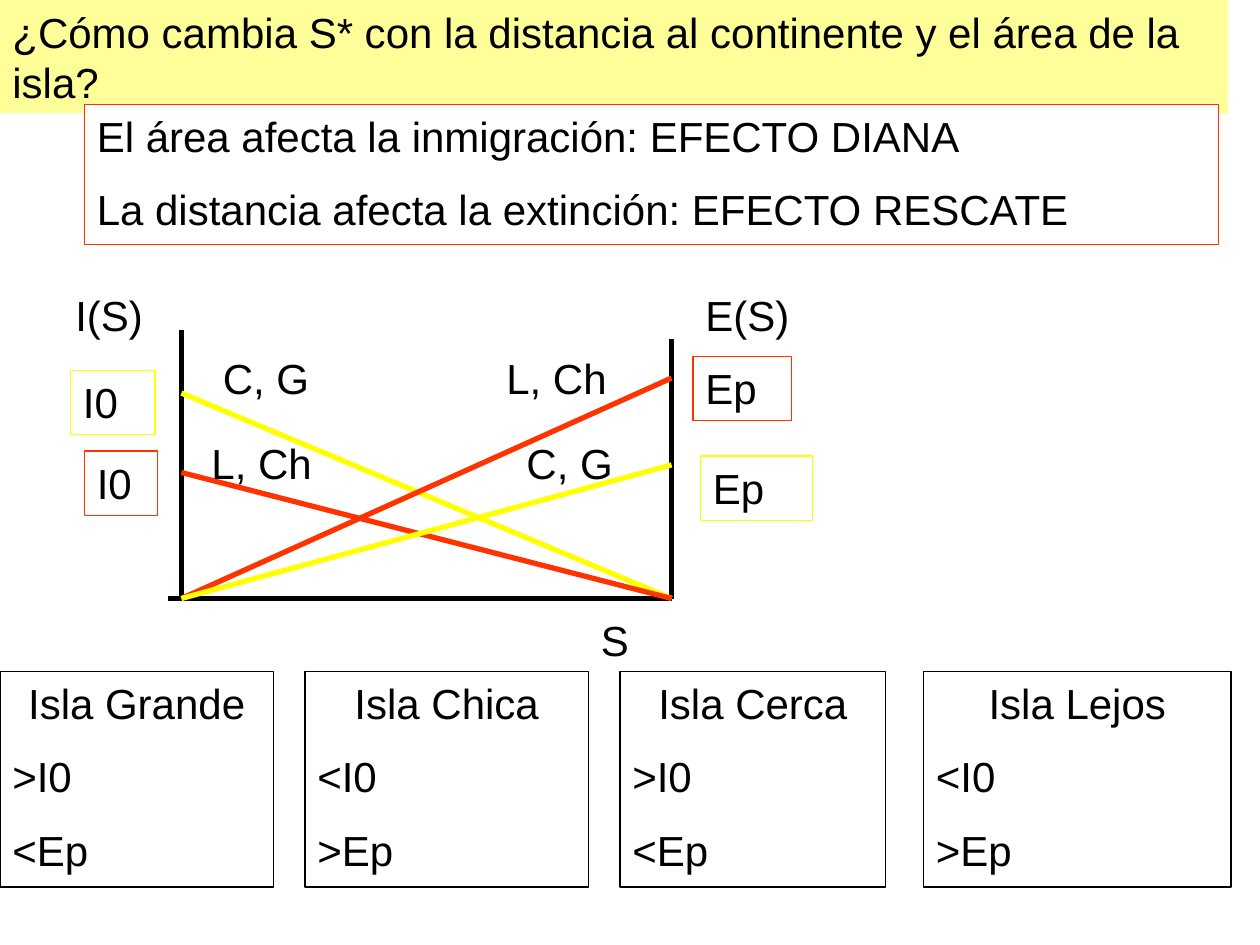
from dataclasses import dataclass

from lxml.etree import SubElement
from pptx import Presentation
from pptx.dml.color import RGBColor
from pptx.enum.shapes import MSO_CONNECTOR, MSO_SHAPE
from pptx.enum.text import MSO_ANCHOR, PP_ALIGN
from pptx.oxml.ns import qn
from pptx.util import Inches, Pt


@dataclass(frozen=True)
class Theme:
    font: str = "Arial"
    text_size: Pt = Pt(24)
    paragraph_gap: Pt = Pt(13)
    border: Pt = Pt(0.75)
    stroke: Pt = Pt(3)
    black: RGBColor = RGBColor(0x00, 0x00, 0x00)
    white: RGBColor = RGBColor(0xFF, 0xFF, 0xFF)
    cream: RGBColor = RGBColor(0xFF, 0xFF, 0x99)
    red: RGBColor = RGBColor(0xFF, 0x33, 0x00)
    yellow: RGBColor = RGBColor(0xFF, 0xFF, 0x00)


THEME = Theme()


def write_paragraphs(shape, lines, centred_heading=False):
    frame = shape.text_frame
    frame.word_wrap = True
    frame.vertical_anchor = MSO_ANCHOR.TOP
    for index, line in enumerate(lines):
        paragraph = frame.add_paragraph() if index else frame.paragraphs[0]
        centred = centred_heading and index == 0
        paragraph.alignment = PP_ALIGN.CENTER if centred else PP_ALIGN.LEFT
        if index:
            paragraph.space_before = THEME.paragraph_gap
        run = paragraph.add_run()
        run.text = line
        run.font.name = THEME.font
        run.font.size = THEME.text_size
        run.font.color.rgb = THEME.black


def add_box(slide, box, lines, fill=THEME.white, border=None, centred_heading=False):
    shape = slide.shapes.add_shape(MSO_SHAPE.RECTANGLE, *map(Inches, box))
    shape.shadow.inherit = False
    shape.fill.solid()
    shape.fill.fore_color.rgb = fill
    if border is None:
        shape.line.fill.background()
    else:
        shape.line.color.rgb = border
        shape.line.width = THEME.border
    write_paragraphs(shape, lines, centred_heading)


def add_label(slide, box, text):
    write_paragraphs(slide.shapes.add_textbox(*map(Inches, box)), [text])


def add_line(slide, start, end, color):
    line = slide.shapes.add_connector(
        MSO_CONNECTOR.STRAIGHT, *map(Inches, (*start, *end)))
    line.line.color.rgb = color
    line.line.width = THEME.stroke
    SubElement(line._element.spPr, qn("a:effectLst"))


def add_header(slide, left, top):
    add_box(slide, (left, top, 9.75, 0.9),
            ["¿Cómo cambia S* con la distancia al continente y el área de la isla?"],
            fill=THEME.cream)
    add_box(slide, (left + 0.67, top + 0.83, 9, 1.11),
            ["El área afecta la inmigración: EFECTO DIANA",
             "La distancia afecta la extinción: EFECTO RESCATE"],
            border=THEME.red)


def add_rate_diagram(slide, left, top, width, height):
    """Immigration and extinction lines between two axes; the box is the plot."""
    right, bottom = left + width, top + height
    add_line(slide, (left, top), (left, bottom), THEME.black)
    add_line(slide, (left - 0.11, bottom), (right, bottom), THEME.black)
    add_line(slide, (right, bottom), (right, top + 0.07), THEME.black)

    for drop, color in ((0.5, THEME.yellow), (1.13, THEME.red)):
        add_line(slide, (left, top + drop), (right, bottom), color)
    for drop, color in ((0.38, THEME.red), (1.07, THEME.yellow)):
        add_line(slide, (left, bottom), (right, top + drop), color)

    rate_boxes = (
        ("Ep", right + 0.17, 0.21, 0.78, THEME.red),
        ("Ep", right + 0.23, 1.0, 0.89, THEME.yellow),
        ("I0", left - 0.88, 0.32, 0.67, THEME.yellow),
        ("I0", left - 0.77, 0.96, 0.58, THEME.red),
    )
    for text, box_left, drop, box_width, color in rate_boxes:
        add_box(slide, (box_left, top + drop, box_width, 0.51), [text], border=color)

    add_box(slide, (left - 0.94, top - 0.37, 0.83, 0.5), ["I(S)"])
    add_box(slide, (right + 0.17, top - 0.37, 1, 0.5), ["E(S)"])
    add_label(slide, (right - 0.66, bottom + 0.08, 0.78, 0.5), "S")

    upper, lower = top + 0.13, top + 0.8
    for text, offset, label_top in (("C, G", 0.23, upper), ("C, G", 2.64, lower),
                                    ("L, Ch", 0.14, lower), ("L, Ch", 2.48, upper)):
        add_label(slide, (left + offset, label_top, 1.25, 0.5), text)


def add_island_cards(slide, left, top, height):
    high_immigration = [">I0", "<Ep"]
    low_immigration = ["<I0", ">Ep"]
    cards = (
        ("Isla Grande", 0, 2.17, high_immigration),
        ("Isla Chica", 2.42, 2.25, low_immigration),
        ("Isla Cerca", 4.92, 2.11, high_immigration),
        ("Isla Lejos", 7.33, 2.44, low_immigration),
    )
    for name, offset, width, rates in cards:
        add_box(slide, (left + offset, top, width, height), [name, *rates],
                border=THEME.black, centred_heading=True)


def main():
    presentation = Presentation()
    presentation.slide_width = Inches(10)
    presentation.slide_height = Inches(7.5)
    slide = presentation.slides.add_slide(presentation.slide_layouts[6])
    add_header(slide, 0, 0)
    add_rate_diagram(slide, 1.44, 2.62, 3.89, 2.13)
    add_island_cards(slide, 0, 5.33, 1.71)
    presentation.save("out.pptx")


if __name__ == "__main__":
    main()
